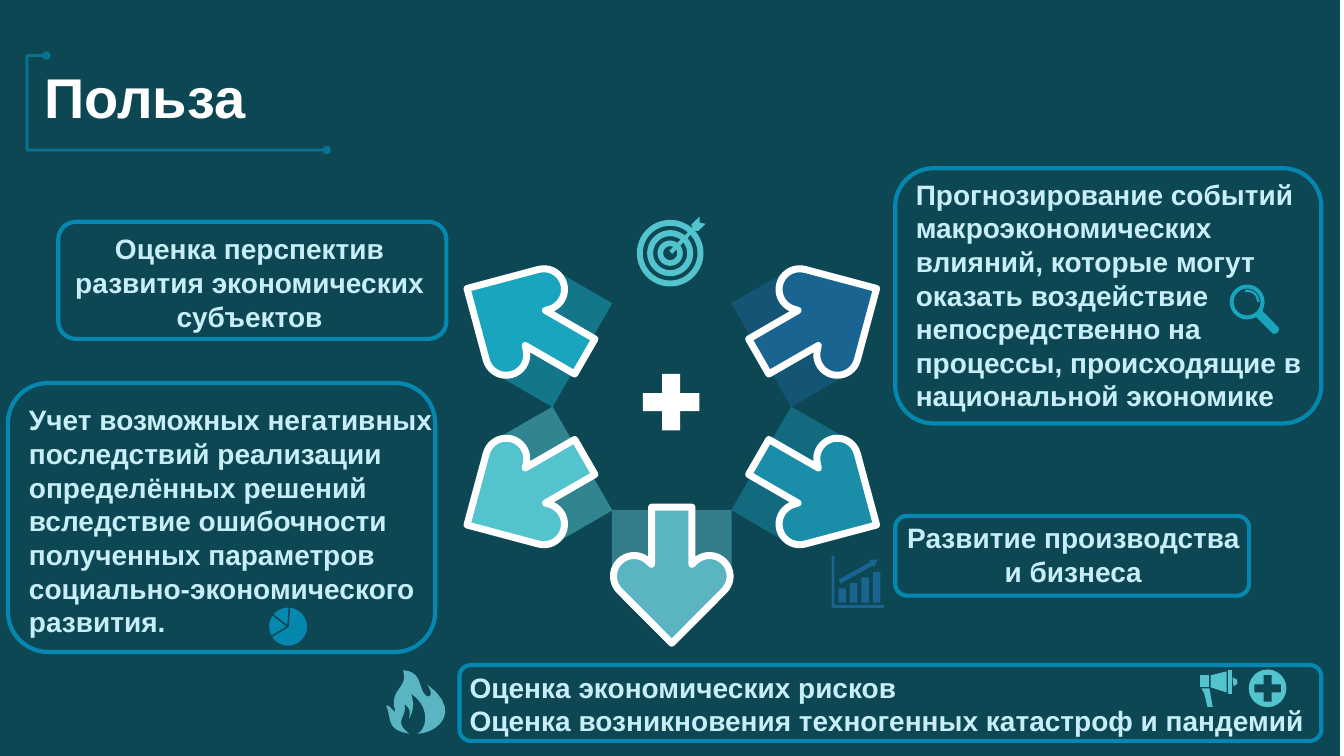
import math

import lxml.etree
import pptx
import pptx.dml.color
import pptx.enum.shapes
import pptx.enum.text
import pptx.oxml
import pptx.oxml.ns
import pptx.util

Cm = pptx.util.Cm
Pt = pptx.util.Pt
RGB = pptx.dml.color.RGBColor
SHAPE = pptx.enum.shapes.MSO_SHAPE
ALIGN = pptx.enum.text.PP_ALIGN
qn = pptx.oxml.ns.qn

BACKDROP = RGB(0x0D, 0x47, 0x54)
WHITE = RGB(0xFF, 0xFF, 0xFF)
PALE = RGB(0xC8, 0xEE, 0xF7)
FRAME_BLUE = RGB(0x05, 0x87, 0xAF)
NAVY = RGB(0x19, 0x64, 0x91)
TEAL = RGB(0x1A, 0x8E, 0xA9)
CYAN = RGB(0x19, 0xA5, 0xBE)
AQUA = RGB(0x53, 0xC3, 0xCD)
MIST = RGB(0x5A, 0xB4, 0xC1)

prs = pptx.Presentation()
prs.slide_width, prs.slide_height = Cm(33.87), Cm(19.05)
slide = prs.slides.add_slide(prs.slide_layouts[1])
shapes = slide.shapes


def paint(shape, fill=None, line=None, width=1):
    """Give a shape its fill and line; None leaves that part empty."""
    shape.shadow.inherit = False
    if fill is None:
        shape.fill.background()
    else:
        shape.fill.solid()
        shape.fill.fore_color.rgb = fill
    if line is None:
        shape.line.fill.background()
    else:
        shape.line.color.rgb = line
        shape.line.width = Pt(width)
    return shape


def polygon(points, fill, line=None, width=1):
    """Draw a closed outline through points given in centimetres."""
    corners = [(Cm(x), Cm(y)) for x, y in points]
    builder = shapes.build_freeform(*corners[0])
    builder.add_line_segments(corners[1:], close=True)
    return paint(builder.convert_to_shape(), fill, line, width)


backdrop = paint(shapes.add_shape(SHAPE.RECTANGLE, Cm(-0.1), Cm(-0.08), Cm(33.87), Cm(19.18)), BACKDROP)
shapes.element.insert(2, backdrop.element)  # behind the placeholders

# Fan of five arrows around the hub, each on a translucent panel
HUB_X, HUB_Y, PANEL_RADIUS = 16.93, 10.25, 3.4
LOBE_X, LOBE_Y, LOBE_RADIUS = 0.95, 4.27, 0.52
lobe_angles = [math.radians(a) for a in range(135, 316, 10)] + [math.radians(315)]
left_half = [(LOBE_RADIUS * math.cos(a) - LOBE_X, LOBE_RADIUS * math.sin(a) + LOBE_Y) for a in lobe_angles]
left_half += [(-0.51, 3.97), (-0.51, 2.53)]
down_arrow = [(0, 5.96)] + left_half + [(-x, y) for x, y in reversed(left_half)]

for turn, color in [(240, NAVY), (300, TEAL), (0, MIST), (60, AQUA), (120, CYAN)]:
    sin, cos = math.sin(math.radians(turn)), math.cos(math.radians(turn))
    panel = paint(shapes.add_shape(
        SHAPE.RECTANGLE, Cm(HUB_X - PANEL_RADIUS * sin - 1.51), Cm(HUB_Y + PANEL_RADIUS * cos - 0.8),
        Cm(3.02), Cm(1.6)), color)
    panel.rotation = (turn + 180) % 360
    tint = panel.element.spPr.find(qn("a:solidFill"))[0]
    lxml.etree.SubElement(tint, qn("a:alpha"), val="50000")
    polygon([(HUB_X + x * cos - y * sin, HUB_Y + x * sin + y * cos) for x, y in down_arrow], color, WHITE, 5)

paint(shapes.add_shape(SHAPE.MATH_PLUS, Cm(15.95), Cm(9.17), Cm(1.93), Cm(1.93)), WHITE)

# Title and its bracket
title = shapes.title
title.left, title.top, title.width, title.height = Cm(0.86), Cm(1.45), Cm(10.8), Cm(1.96)

bracket = shapes.add_connector(pptx.enum.shapes.MSO_CONNECTOR.ELBOW, Cm(1.17), Cm(1.4), Cm(8.23), Cm(3.78))
bracket.line.color.rgb = FRAME_BLUE
bracket.line.width = Pt(2)
bracket_props = bracket.element.spPr
bend = bracket_props.find(qn("a:prstGeom")).get_or_add_avLst()
lxml.etree.SubElement(bend, qn("a:gd"), name="adj1", fmla="val -6900")
stroke = bracket_props.find(qn("a:ln"))
lxml.etree.SubElement(stroke.find(qn("a:solidFill"))[0], qn("a:alpha"), val="70000")
for end in ("a:headEnd", "a:tailEnd"):
    lxml.etree.SubElement(stroke, qn(end), type="oval")
lxml.etree.SubElement(bracket_props, qn("a:effectLst"))

# Benefits
risks = slide.placeholders[1]
risks.left, risks.top, risks.width, risks.height = Cm(11.58), Cm(16.76), Cm(22), Cm(1.96)
texts = [
    (title, "Польза", ALIGN.LEFT, 40, WHITE),
    (risks, "Оценка экономических рисков\nОценка возникновения техногенных катастроф и пандемий",
     ALIGN.LEFT, 20, PALE),
]
benefits = [
    ((20.3, 13, 13.5, 1.96), "Развитие производства\nи бизнеса", ALIGN.CENTER),
    ((0.48, 10.03, 10.74, 6.25),
     "Учет возможных негативных последствий реализации определённых решений вследствие "
     "ошибочности полученных параметров социально-экономического развития.", ALIGN.LEFT),
    ((1.17, 5.72, 10.24, 2.82), "Оценка перспектив развития экономических субъектов", ALIGN.CENTER),
    ((22.83, 4.34, 10.74, 6.25),
     "Прогнозирование событий макроэкономических влияний, которые могут оказать воздействие "
     "непосредственно на процессы, происходящие в национальной экономике", ALIGN.LEFT),
]
for place, wording, align in benefits:
    texts.append((shapes.add_textbox(*map(Cm, place)), wording, align, 20, PALE))

for holder, wording, align, size, color in texts:
    frame = holder.text_frame
    frame.text = wording
    frame.word_wrap = True
    frame.auto_size = pptx.enum.text.MSO_AUTO_SIZE.NONE
    frame.vertical_anchor = pptx.enum.text.MSO_ANCHOR.TOP
    for paragraph in frame.paragraphs:
        paragraph.alignment = align
        paragraph.space_before = Pt(0)
        font = paragraph.runs[0].font
        font.name, font.size, font.bold = "Arial", Pt(size), True
        font.color.rgb = color

for paragraph in risks.text_frame.paragraphs:
    props = paragraph._p.get_or_add_pPr()
    props.set("marL", "0")
    props.set("indent", "0")
    lxml.etree.SubElement(props, qn("a:buNone"))

for place in [(1.47, 5.59, 9.78, 2.95), (22.56, 4.24, 10.74, 6.43), (0.2, 9.65, 10.77, 6.78),
              (11.58, 16.76, 21.72, 1.91), (22.56, 13, 8.92, 2.01)]:
    border = paint(shapes.add_shape(SHAPE.ROUNDED_RECTANGLE, *map(Cm, place)), None, FRAME_BLUE, 3)
    border.adjustments[0] = 0.15

# Target and magnifier rings: centre, radius, thickness
for x, y, radius, thickness, color in [(16.89, 6.38, 0.84, 0.15, AQUA), (16.89, 6.38, 0.58, 0.15, AQUA),
                                       (16.89, 6.38, 0.32, 0.14, AQUA), (31.43, 7.61, 0.44, 0.1, CYAN)]:
    ring = paint(shapes.add_shape(
        SHAPE.DONUT, Cm(x - radius), Cm(y - radius), Cm(2 * radius), Cm(2 * radius)), color)
    ring.adjustments[0] = thickness / (2 * radius)
polygon([(17.63, 5.46), (17.63, 5.61), (17.78, 5.64), (17.6, 5.82), (17.5, 5.82), (16.94, 6.4),
         (16.87, 6.32), (17.45, 5.74), (17.42, 5.66)], AQUA)

ANGLE_UNIT = 0.6  # adjustment value of one degree
glint = paint(shapes.add_shape(SHAPE.BLOCK_ARC, Cm(31.12), Cm(7.3), Cm(0.62), Cm(0.62)), CYAN)
for index, value in enumerate([260 * ANGLE_UNIT, 0, 0.09]):
    glint.adjustments[index] = value
polygon([(31.8, 7.82), (32.23, 8.26), (32.23, 8.33), (32.16, 8.41), (32.08, 8.41), (31.65, 7.98)], CYAN)

# Megaphone: box, horn, rim, knob, handle
for part in [
    [(30.23, 17.02), (30.48, 17.02), (30.48, 17.32), (30.23, 17.32)],
    [(30.91, 16.92), (30.91, 17.45), (30.51, 17.32), (30.51, 17.02)],
    [(30.94, 16.89), (31.04, 16.89), (31.04, 17.48), (30.94, 17.48)],
    [(31.06, 17.07), (31.17, 17.12), (31.19, 17.22), (31.09, 17.3)],
    [(30.48, 17.35), (30.56, 17.81), (30.43, 17.81), (30.35, 17.48), (30.28, 17.35)],
]:
    polygon(part, AQUA)

# Medical badge
paint(shapes.add_shape(SHAPE.OVAL, Cm(31.47), Cm(16.87), Cm(0.95), Cm(0.95)), AQUA)
cross = paint(shapes.add_shape(SHAPE.CROSS, Cm(31.61), Cm(17.01), Cm(0.67), Cm(0.67)), BACKDROP)
cross.adjustments[0] = 0.35

# Flame: Bezier segments as two handles and an end point
flame_start = (10.31, 18.49)
flame_curves = [
    ((9.7, 18.39), (9.88, 18.08), (9.73, 17.78)), ((9.83, 17.75), (9.98, 18.03), (9.96, 17.91)),
    ((9.78, 17.37), (10.31, 17.35), (10.16, 16.89)), ((10.69, 16.92), (10.52, 17.42), (10.77, 17.55)),
    ((10.85, 17.55), (10.92, 17.5), (10.77, 17.25)), ((11.66, 17.91), (11.05, 18.47), (10.52, 18.49)),
    ((10.77, 18.36), (10.85, 17.81), (10.36, 17.48)), ((10.46, 17.78), (10.39, 17.96), (10.31, 18.11)),
    ((10.31, 18.03), (10.39, 17.86), (10.19, 17.75)), ((10.29, 18.06), (9.88, 18.16), (10.31, 18.49)),
]
flame = [flame_start]
for first, second, finish in flame_curves:
    origin = flame[-1]
    for t in (step / 10 for step in range(1, 11)):
        weights = ((1 - t) ** 3, 3 * t * (1 - t) ** 2, 3 * t ** 2 * (1 - t), t ** 3)
        knots = (origin, first, second, finish)
        flame.append(tuple(sum(w * k[axis] for w, k in zip(weights, knots)) for axis in (0, 1)))
polygon(flame, MIST)

# Growth icon: bars, rising arrow, axes
for index in range(4):
    bar_height = 0.36 + 0.14 * index
    paint(shapes.add_shape(SHAPE.RECTANGLE, Cm(21.13 + 0.29 * index), Cm(15.19 - bar_height),
                           Cm(0.19), Cm(bar_height)), NAVY)
polygon([(21.89, 14.1), (22.12, 14.1), (22.02, 14.3), (22, 14.25), (21.18, 14.71), (21.13, 14.61),
         (21.95, 14.15)], NAVY)
polygon([(20.96, 14), (21.03, 14), (21.03, 15.24), (22.28, 15.24), (22.28, 15.32), (20.96, 15.32)], NAVY)

# Pie icon
for start, stop in [(149, 218), (218, 274), (274, 149)]:
    wedge = paint(shapes.add_shape(SHAPE.PIE, Cm(6.76), Cm(15.29), Cm(1), Cm(1)), FRAME_BLUE, BACKDROP, 1)
    wedge.adjustments[0], wedge.adjustments[1] = start * ANGLE_UNIT, stop * ANGLE_UNIT

prs.save("out.pptx")
